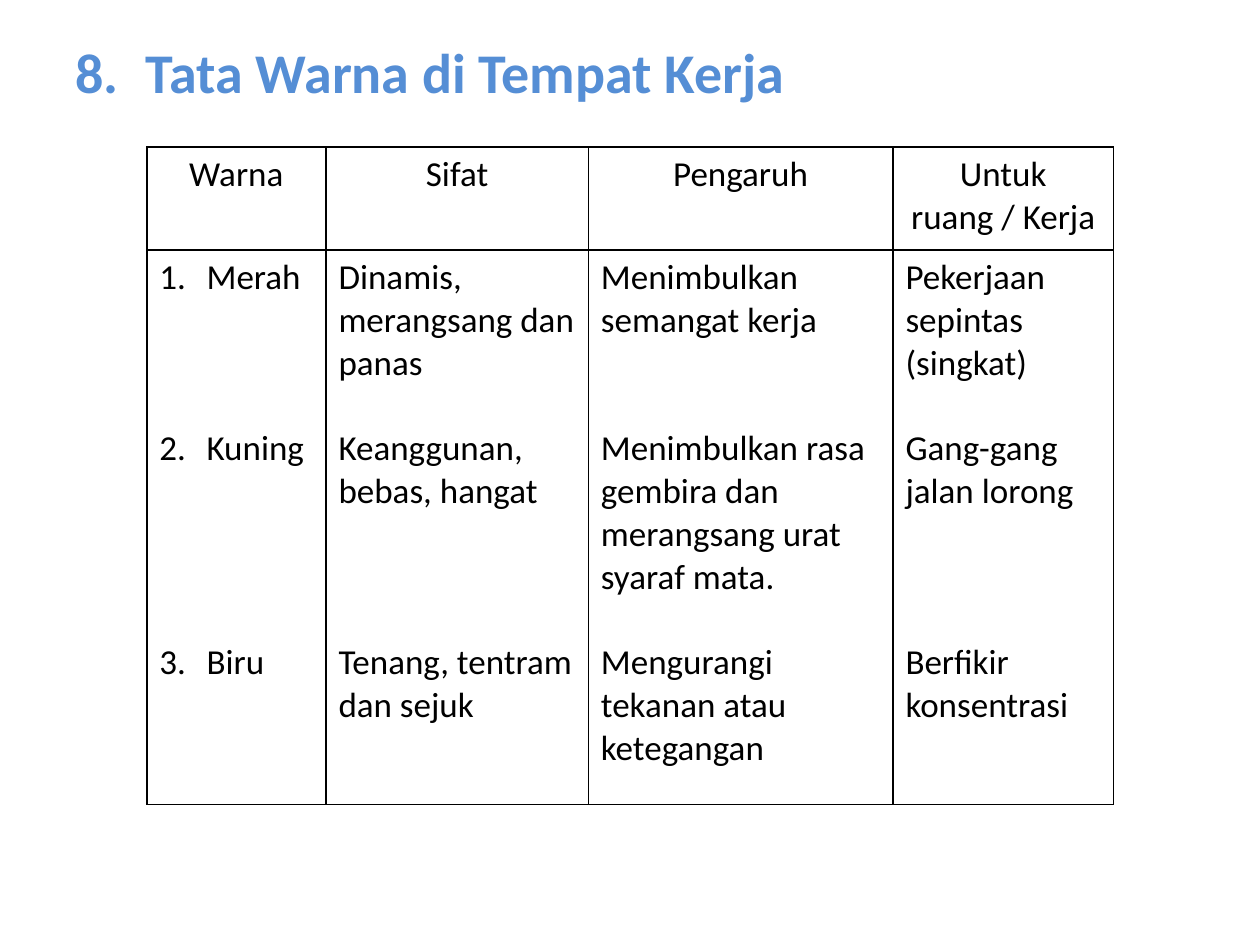
from dataclasses import dataclass

from lxml.etree import SubElement
from pptx import Presentation
from pptx.dml.color import RGBColor
from pptx.enum.text import MSO_ANCHOR, PP_ALIGN
from pptx.oxml.ns import qn
from pptx.util import Cm, Pt


@dataclass(frozen=True)
class Theme:
    font: str = "Calibri"
    ink: str = "000000"
    blue: str = "558ED5"
    head: int = 32
    body: int = 20
    line: float = 1
    pitch: float = 24.4  # height of one body line, in points


HEADS = ["Warna", "Sifat", "Pengaruh", "Untuk\nruang / Kerja"]
# Each entry holds its text and the number of lines it wraps to.
COLS = [
    [("Merah", 1), ("Kuning", 1), ("Biru", 1)],
    [("Dinamis, merangsang dan panas", 3), ("Keanggunan, bebas, hangat", 2),
     ("Tenang, tentram dan sejuk", 2)],
    [("Menimbulkan semangat kerja", 2),
     ("Menimbulkan rasa gembira dan merangsang urat syaraf mata.", 4),
     ("Mengurangi tekanan atau ketegangan", 3)],
    [("Pekerjaan sepintas (singkat)", 3), ("Gang-gang jalan lorong", 2),
     ("Berfikir konsentrasi", 2)],
]
SLOTS = [4, 5]  # lines from one colour to the next
WIDTHS = [3.61, 5.29, 6.14, 4.45]
HEIGHTS = [2.08, 11.18]


class Sheet:
    def __init__(self, slide, theme):
        self.slide, self.theme = slide, theme

    def label(self, para, text, size, color, **form):
        para.text = text
        for run in para.runs:
            look = {"name": self.theme.font, "size": Pt(size), **form}
            for key, val in look.items():
                setattr(run.font, key, val)
            run.font.color.rgb = RGBColor.from_string(color)

    def number(self, para, start, indent):
        """Give the paragraph an automatic number with a hanging indent."""
        props = para._p.get_or_add_pPr()
        props.set("marL", str(Cm(indent)))
        props.set("indent", str(-Cm(indent)))
        SubElement(props, qn("a:buFont"), typeface="+mj-lt")
        SubElement(props, qn("a:buAutoNum"), type="arabicPeriod",
                   startAt=str(start))

    def title(self, text, start, left, top, width, height):
        box = self.slide.shapes.add_textbox(
            Cm(left), Cm(top), Cm(width), Cm(height))
        frame = box.text_frame
        frame.word_wrap = True
        para = frame.paragraphs[0]
        para.space_before = Pt(self.theme.head * 0.2)
        self.label(para, text, self.theme.head, self.theme.blue, bold=True)
        self.number(para, start, 1.42)

    def border(self, cell):
        props = cell._tc.get_or_add_tcPr()
        for pos, side in enumerate(("lnL", "lnR", "lnT", "lnB")):
            line = SubElement(props, qn("a:" + side),
                              w=str(Pt(self.theme.line)))
            fill = SubElement(line, qn("a:solidFill"))
            SubElement(fill, qn("a:srgbClr"), val=self.theme.ink)
            props.insert(pos, line)

    def table(self, left, top):
        grid = self.slide.shapes.add_table(
            len(HEIGHTS), len(WIDTHS), Cm(left), Cm(top),
            Cm(sum(WIDTHS)), Cm(sum(HEIGHTS))).table
        for key in ("first_row", "horz_banding"):
            setattr(grid, key, False)
        for col, width in zip(grid.columns, WIDTHS):
            col.width = Cm(width)
        for row, height in zip(grid.rows, HEIGHTS):
            row.height = Cm(height)
        for cell in grid.iter_cells():
            cell.fill.background()
            cell.vertical_anchor = MSO_ANCHOR.TOP
            self.border(cell)
        for col, (head, items) in enumerate(zip(HEADS, COLS)):
            para = grid.cell(0, col).text_frame.paragraphs[0]
            para.alignment = PP_ALIGN.CENTER
            self.label(para, head, self.theme.body, self.theme.ink)
            self.stack(grid.cell(1, col).text_frame, items, col == 0)

    def stack(self, frame, items, listed):
        """Stack the entries so that each starts level across the columns."""
        for pos, (text, _) in enumerate(items):
            para = frame.add_paragraph() if pos else frame.paragraphs[0]
            if pos:
                gap = SLOTS[pos - 1] - items[pos - 1][1]
                para.space_before = Pt(gap * self.theme.pitch)
            self.label(para, text, self.theme.body, self.theme.ink)
            if listed:
                self.number(para, pos + 1, 0.95)


def main():
    deck = Presentation()
    deck.slide_width, deck.slide_height = Cm(25.4), Cm(19.05)
    sheet = Sheet(deck.slides.add_slide(deck.slide_layouts[6]), Theme())
    sheet.title("Tata Warna di Tempat Kerja", 8, 1.27, 0.64, 22.86, 17.78)
    sheet.table(2.96, 2.96)
    deck.save("out.pptx")


if __name__ == "__main__":
    main()
